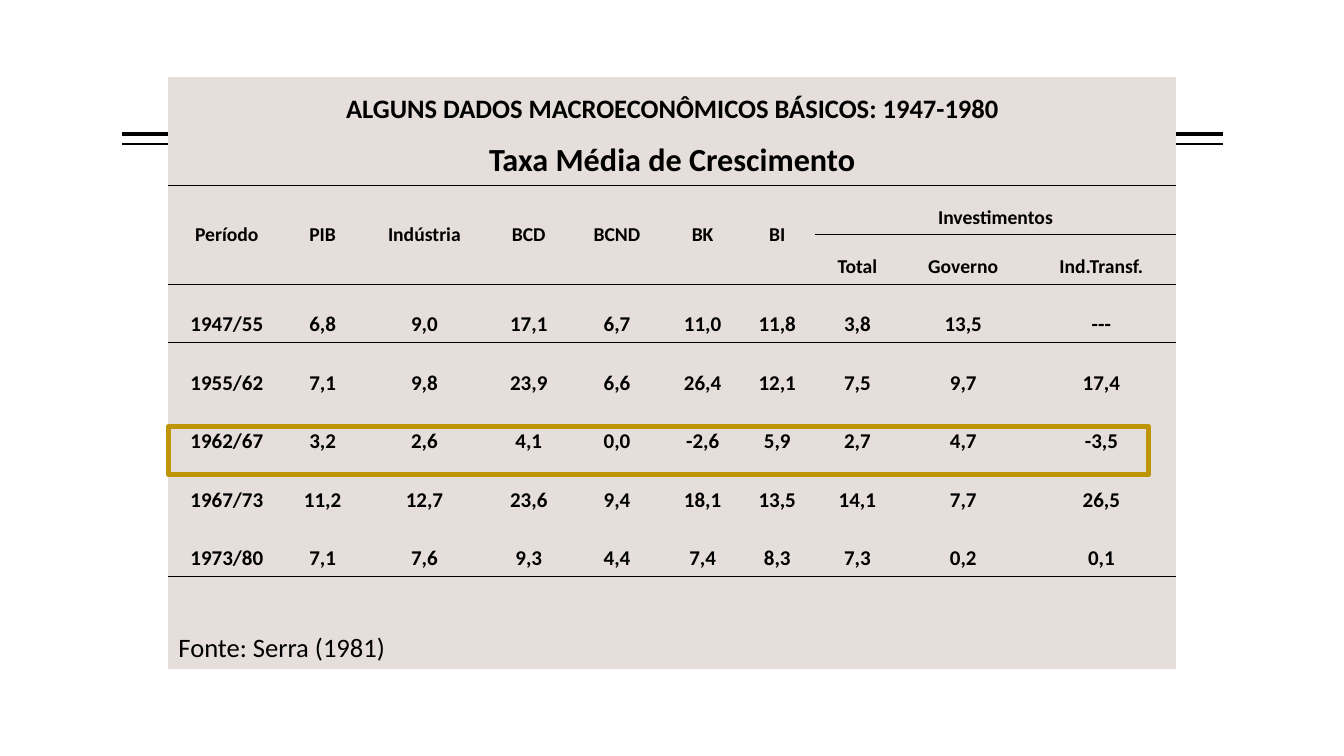
from lxml.etree import SubElement
from pptx import Presentation
from pptx.dml.color import RGBColor
from pptx.enum.shapes import MSO_CONNECTOR, MSO_SHAPE
from pptx.enum.text import MSO_ANCHOR, PP_ALIGN
from pptx.oxml import parse_xml
from pptx.oxml.ns import nsdecls, qn
from pptx.util import Inches, Pt

BLACK = RGBColor(0x00, 0x00, 0x00)
PANEL = RGBColor(0xE5, 0xDE, 0xDB)
GOLD = RGBColor(0xBD, 0x95, 0x06)
FONT = "Calibri"
PLAIN_TABLE_STYLE = "{2D5ABB26-0587-4C30-8999-92F81FD0307C}"

COLUMN_WIDTHS = [1.16, 0.74, 1.28, 0.79, 0.96, 0.74, 0.74, 0.85, 1.25, 1.49]
ROW_HEIGHTS = [0.54] * 2 + [0.49] * 2 + [0.58] * 5 + [0.92]
TITLE_ROW, SUBTITLE_ROW, HEADER_ROW, SUBHEADER_ROW, FIRST_DATA_ROW = range(5)
SOURCE_ROW = len(ROW_HEIGHTS) - 1
RULED_ROWS = (SUBTITLE_ROW, SUBHEADER_ROW, SOURCE_ROW - 1)

TITLE = "ALGUNS DADOS MACROECONÔMICOS BÁSICOS: 1947-1980"
SUBTITLE = "Taxa Média de Crescimento"
SOURCE = "Fonte: Serra (1981)"
HEADERS = ["Período", "PIB", "Indústria", "BCD", "BCND", "BK", "BI"]
INVESTMENT_GROUP = "Investimentos"
INVESTMENT_HEADERS = ["Total", "Governo", "Ind.Transf."]
GROWTH_RATES = [
    ["1947/55", "6,8", "9,0", "17,1", "6,7", "11,0", "11,8", "3,8", "13,5", "---"],
    ["1955/62", "7,1", "9,8", "23,9", "6,6", "26,4", "12,1", "7,5", "9,7", "17,4"],
    ["1962/67", "3,2", "2,6", "4,1", "0,0", "-2,6", "5,9", "2,7", "4,7", "-3,5"],
    ["1967/73", "11,2", "12,7", "23,6", "9,4", "18,1", "13,5", "14,1", "7,7", "26,5"],
    ["1973/80", "7,1", "7,6", "9,3", "4,4", "7,4", "8,3", "7,3", "0,2", "0,1"],
]


def add_double_rule(slide, left, top, width):
    for offset, weight in ((0, 3), (0.1, 1)):
        y = Inches(top + offset)
        rule = slide.shapes.add_connector(
            MSO_CONNECTOR.STRAIGHT, Inches(left + width), y, Inches(left), y)
        rule.line.color.rgb = BLACK
        rule.line.width = Pt(weight)
        SubElement(rule._element.spPr, qn("a:effectLst"))


def write_cell(cell, text, size, anchor=MSO_ANCHOR.BOTTOM,
               alignment=PP_ALIGN.CENTER, bold=True):
    cell.text = text
    cell.vertical_anchor = anchor
    paragraph = cell.text_frame.paragraphs[0]
    paragraph.alignment = alignment
    paragraph.font.name = FONT
    paragraph.font.size = Pt(size)
    paragraph.font.bold = bold
    paragraph.font.color.rgb = BLACK


def add_border(cell, side):
    border = parse_xml(
        f'<a:{side} {nsdecls("a")} w="{Pt(1)}"><a:solidFill>'
        f'<a:srgbClr val="{BLACK}"/></a:solidFill></a:{side}>')
    cell._tc.get_or_add_tcPr().insert(0, border)


def style_grid(table):
    for row in range(len(ROW_HEIGHTS)):
        for column in range(len(COLUMN_WIDTHS)):
            cell = table.cell(row, column)
            cell.fill.solid()
            cell.fill.fore_color.rgb = PANEL
            if row in RULED_ROWS:
                add_border(cell, "lnB")
            if row - 1 in RULED_ROWS:
                add_border(cell, "lnT")


def fill_headings(table):
    last_column = len(COLUMN_WIDTHS) - 1
    for row, text, size in ((TITLE_ROW, TITLE, 19), (SUBTITLE_ROW, SUBTITLE, 23)):
        table.cell(row, 0).merge(table.cell(row, last_column))
        write_cell(table.cell(row, 0), text, size)
    for column, text in enumerate(HEADERS):
        cell = table.cell(HEADER_ROW, column)
        cell.merge(table.cell(SUBHEADER_ROW, column))
        write_cell(cell, text, 14, MSO_ANCHOR.MIDDLE)
    group = table.cell(HEADER_ROW, len(HEADERS))
    group.merge(table.cell(HEADER_ROW, last_column))
    write_cell(group, INVESTMENT_GROUP, 14)
    for column, text in enumerate(INVESTMENT_HEADERS, len(HEADERS)):
        write_cell(table.cell(SUBHEADER_ROW, column), text, 14)


def add_growth_table(slide, left, top):
    frame = slide.shapes.add_table(
        len(ROW_HEIGHTS), len(COLUMN_WIDTHS), Inches(left), Inches(top),
        Inches(sum(COLUMN_WIDTHS)), Inches(sum(ROW_HEIGHTS)))
    table = frame.table
    table.first_row = table.horz_banding = False
    table._tbl.tblPr.find(qn("a:tableStyleId")).text = PLAIN_TABLE_STYLE
    for column, width in zip(table.columns, COLUMN_WIDTHS):
        column.width = Inches(width)
    for row, height in zip(table.rows, ROW_HEIGHTS):
        row.height = Inches(height)
    style_grid(table)
    fill_headings(table)
    for row, rates in enumerate(GROWTH_RATES, FIRST_DATA_ROW):
        for column, text in enumerate(rates):
            write_cell(table.cell(row, column), text, 15)
    source = table.cell(SOURCE_ROW, 0)
    source.merge(table.cell(SOURCE_ROW, 2))
    write_cell(source, SOURCE, 19, alignment=PP_ALIGN.LEFT, bold=False)


def add_highlight(slide, left, top, width, height):
    highlight = slide.shapes.add_shape(
        MSO_SHAPE.RECTANGLE, Inches(left), Inches(top), Inches(width), Inches(height))
    highlight.shadow.inherit = False
    highlight.fill.background()
    highlight.line.color.rgb = GOLD
    highlight.line.width = Pt(3.78)


def main():
    presentation = Presentation()
    presentation.slide_width = Inches(13.33)
    presentation.slide_height = Inches(7.5)
    slide = presentation.slides.add_slide(presentation.slide_layouts[6])
    add_double_rule(slide, 1.21, 1.33, 10.92)
    add_growth_table(slide, 1.67, 0.76)
    add_highlight(slide, 1.67, 4.23, 9.72, 0.48)
    presentation.save("out.pptx")


if __name__ == "__main__":
    main()
